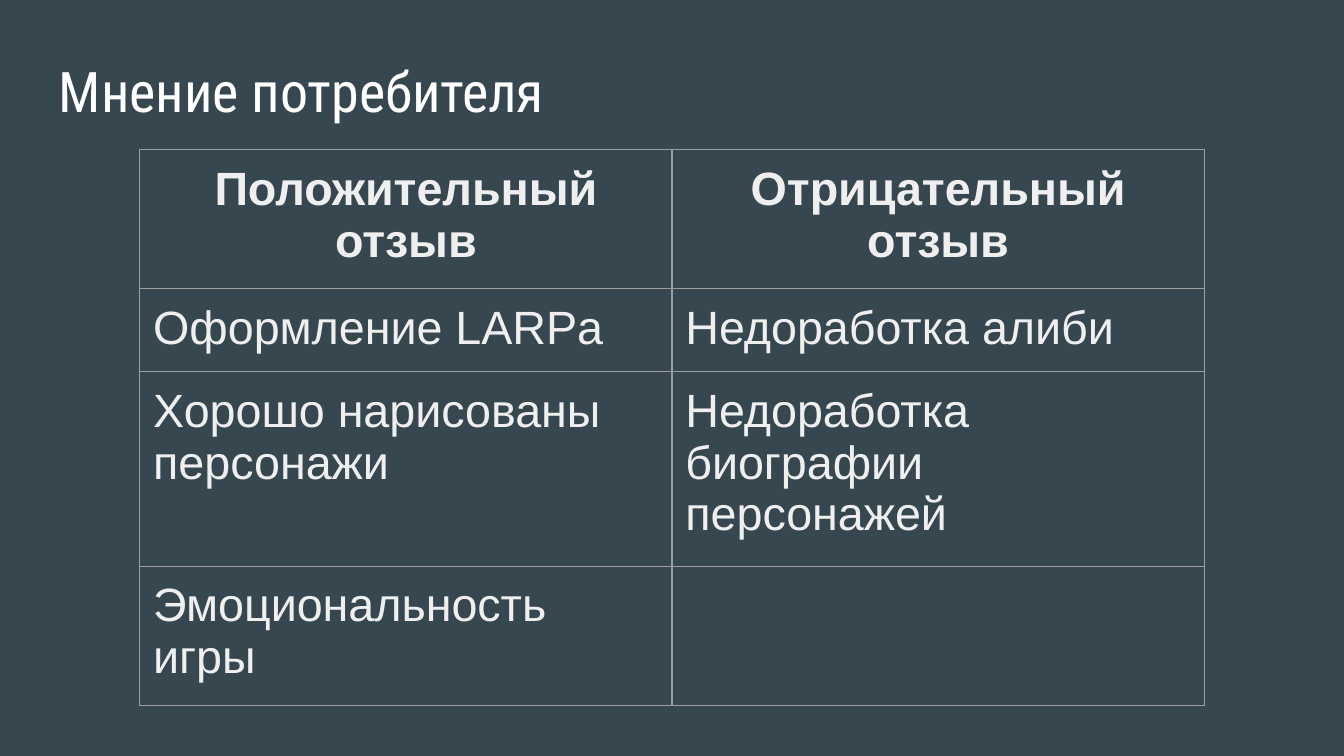
from dataclasses import dataclass

from lxml import etree
from pptx import Presentation
from pptx import util as u
from pptx.dml.color import RGBColor
from pptx.enum import text
from pptx.oxml.ns import qn
from pptx.slide import Slide
from pptx.table import _Cell
from pptx.text.text import TextFrame


@dataclass(frozen=True)
class Theme:
    background: str = "37474F"
    title_color: str = "FFFFFF"
    body_color: str = "EFEFEF"
    border_color: str = "9E9E9E"
    title_font: str = "Roboto Condensed"
    body_font: str = "Arial"
    title_size: float = 30
    body_size: float = 25
    border_width: float = 0.75
    inset: float = 0.1


@dataclass(frozen=True)
class Review:
    positive: str
    negative: str
    is_header: bool = False


THEME = Theme()
WIDTH = u.Inches(10)
HEIGHT = u.Emu(WIDTH * 9 // 16)
HEADER_HEIGHT, ROW_HEIGHT = u.Inches(0.53), u.Inches(0.42)
FRAME_SIZE = u.Inches(3.28)

REVIEWS = [
    Review("Положительный отзыв", "Отрицательный отзыв", is_header=True),
    Review("Оформление LARPa", "Недоработка алиби"),
    Review("Хорошо нарисованы персонажи", "Недоработка биографии персонажей"),
    Review("Эмоциональность игры", ""),
]


def share(length: int, percent: float) -> u.Emu:
    return u.Emu(round(length * percent / 100))


def set_insets(target: TextFrame | _Cell) -> None:
    target.margin_left = target.margin_right = u.Inches(THEME.inset)
    target.margin_top = target.margin_bottom = u.Inches(THEME.inset)


def format_text(frame: TextFrame, font_name: str, size: float, color: str,
                bold: bool = False) -> None:
    """Style every run, with one typeface for all scripts."""
    for paragraph in frame.paragraphs:
        paragraph.line_spacing = 1.0
        paragraph.space_before = paragraph.space_after = u.Pt(0)
        for run in paragraph.runs:
            run.font.name = font_name
            run.font.size = u.Pt(size)
            run.font.bold = bold
            run.font.color.rgb = RGBColor.from_string(color)
            for script in ("a:ea", "a:cs"):
                etree.SubElement(run.font._element, qn(script), typeface=font_name)


def set_borders(cell: _Cell) -> None:
    """Outline all four sides; borders must precede the fill in the XML."""
    properties = cell._tc.get_or_add_tcPr()
    for index, side in enumerate(("a:lnL", "a:lnR", "a:lnT", "a:lnB")):
        line = etree.Element(qn(side), w=str(u.Pt(THEME.border_width)))
        fill = etree.SubElement(line, qn("a:solidFill"))
        etree.SubElement(fill, qn("a:srgbClr"), val=THEME.border_color)
        properties.insert(index, line)


def add_title(slide: Slide, title: str) -> None:
    left = share(WIDTH, 3.41)
    box = slide.shapes.add_textbox(left, share(HEIGHT, 5.7),
                                   WIDTH - 2 * left, share(HEIGHT, 11.2))
    frame = box.text_frame
    frame.word_wrap = True
    frame.vertical_anchor = text.MSO_ANCHOR.TOP
    set_insets(frame)
    frame.text = title
    format_text(frame, THEME.title_font, THEME.title_size, THEME.title_color)


def fill_cell(cell: _Cell, content: str, is_header: bool) -> None:
    cell.fill.background()
    set_borders(cell)
    set_insets(cell)
    cell.text_frame.text = content
    if is_header:
        cell.text_frame.paragraphs[0].alignment = text.PP_ALIGN.CENTER
    format_text(cell.text_frame, THEME.body_font, THEME.body_size,
                THEME.body_color, is_header)


def add_reviews(slide: Slide, reviews: list[Review]) -> None:
    """Draw the reviews as a table whose rows grow with their text."""
    left = share(WIDTH, 10.4)
    frame = slide.shapes.add_table(len(reviews), 2, left, share(HEIGHT, 19.8),
                                   WIDTH - 2 * left, FRAME_SIZE)
    table = frame.table
    table.first_row = table.horz_banding = False
    properties = table._tbl.tblPr
    properties.remove(properties.find(qn("a:tableStyleId")))
    for index, review in enumerate(reviews):
        table.rows[index].height = HEADER_HEIGHT if review.is_header else ROW_HEIGHT
        for column, content in enumerate((review.positive, review.negative)):
            fill_cell(table.cell(index, column), content, review.is_header)
    frame.width = frame.height = FRAME_SIZE


def main() -> None:
    presentation = Presentation()
    presentation.slide_width, presentation.slide_height = WIDTH, HEIGHT
    slide = presentation.slides.add_slide(presentation.slide_layouts[6])
    slide.background.fill.solid()
    slide.background.fill.fore_color.rgb = RGBColor.from_string(THEME.background)
    add_title(slide, "Мнение потребителя")
    add_reviews(slide, REVIEWS)
    presentation.save("out.pptx")


if __name__ == "__main__":
    main()
